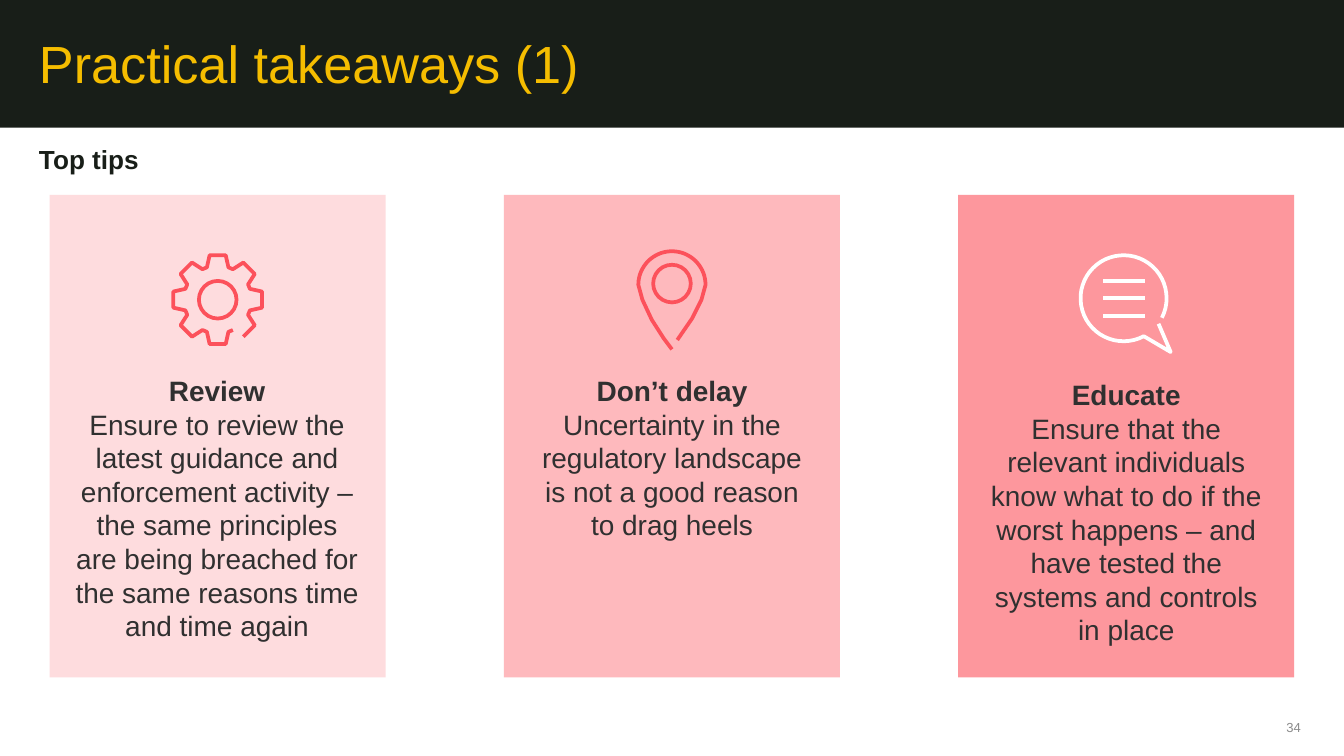
from math import cos, sin, radians
from lxml.etree import SubElement
from pptx import Presentation
from pptx.dml.color import RGBColor
from pptx.enum.shapes import MSO_CONNECTOR, MSO_SHAPE
from pptx.enum.text import MSO_ANCHOR, PP_ALIGN
from pptx.oxml.ns import qn
from pptx.util import Inches, Pt

CORAL, WHITE, DARK, GREY = "FC515B", "FFFFFF", "181E18", "303030"
rgb = RGBColor.from_string


def set_text(shape, lines, size, color, bold_first=False, align=PP_ALIGN.LEFT,
             anchor=MSO_ANCHOR.TOP):
    tf = shape.text_frame
    tf.word_wrap = True
    tf.vertical_anchor = anchor
    tf.margin_left = tf.margin_right = tf.margin_top = tf.margin_bottom = 0
    tf.text = "\n".join(lines)
    for i, p in enumerate(tf.paragraphs):
        p.alignment = align
        p.font.name, p.font.size = "Arial", Pt(size)
        p.font.color.rgb = rgb(color)
        p.font.bold = bold_first and i == 0


def arc(cx, cy, r, start, end, steps=48):
    angles = [radians(start + (end - start) * i / steps) for i in range(steps + 1)]
    return [(cx + r * cos(a), cy + r * sin(a)) for a in angles]


# A 16:9 slide
prs = Presentation()
prs.slide_width = Inches(10)
prs.slide_height = prs.slide_width * 9 // 16
s = prs.slides.add_slide(prs.slide_layouts[5])

# Title on a dark band
band = s.shapes.add_shape(MSO_SHAPE.RECTANGLE, 0, 0, Inches(10), Inches(0.95))
band.shadow.inherit = False
band.fill.solid()
band.fill.fore_color.rgb = rgb(DARK)
band.line.fill.background()
s.shapes._spTree.insert(2, band._element)

title = s.shapes.title
title.left, title.top = Inches(0.29), Inches(0.23)
title.width, title.height = Inches(9.42), Inches(0.47)
set_text(title, ["Practical takeaways (1)"], 28, "F5BD00", anchor=MSO_ANCHOR.MIDDLE)

# Subheading and page number
tb = s.shapes.add_textbox(Inches(0.29), Inches(1.07), Inches(9.42), Inches(3.82))
set_text(tb, ["Top tips"], 14, DARK, bold_first=True)
tb = s.shapes.add_textbox(Inches(9.54), Inches(5.35), Inches(0.17), Inches(0.12))
set_text(tb, ["34"], 7, "8B8B8B", align=PP_ALIGN.CENTER, anchor=MSO_ANCHOR.MIDDLE)

# Cards: fill, text left, top and width, heading, body
cards = [
    ("FEDCDE", 0.54, 2.78, 2.15, "Review",
     "Ensure to review the latest guidance and enforcement activity – the same "
     "principles are being breached for the same reasons time and time again"),
    ("FEB9BD", 3.99, 2.78, 2.02, "Don’t delay",
     "Uncertainty in the regulatory landscape is not a good reason to drag heels"),
    ("FD979D", 7.37, 2.81, 2.02, "Educate",
     "Ensure that the relevant individuals know what to do if the worst happens – "
     "and have tested the systems and controls in place"),
]
for i, (fill, x, y, w, heading, body) in enumerate(cards):
    card = s.shapes.add_shape(MSO_SHAPE.RECTANGLE, Inches(0.37 + 3.38 * i), Inches(1.45),
                              Inches(2.5), Inches(3.59))
    card.shadow.inherit = False
    card.fill.solid()
    card.fill.fore_color.rgb = rgb(fill)
    card.line.fill.background()
    tb = s.shapes.add_textbox(Inches(x), Inches(y), Inches(w), Inches(0.75))
    set_text(tb, [heading, body], 15, GREY, bold_first=True, align=PP_ALIGN.CENTER)

# Icon outlines: eight-toothed gear, map pin, speech bubble
tooth = [(-0.08, -0.24), (-0.06, -0.33), (0.06, -0.33), (0.08, -0.24)]
gear = []
for k in range(3, 11):
    a = radians(45 * k)
    gear += [(1.62 + x * cos(a) - y * sin(a), 2.23 + x * sin(a) + y * cos(a))
             for x, y in tooth]
gear = gear[3:] + gear[:3]
pin = ([(5, 2.6), (4.94, 2.52), (4.85, 2.38), (4.78, 2.23)]
       + arc(5, 2.12, 0.25, 180, 360)
       + [(5.22, 2.23), (5.15, 2.37), (5.04, 2.53)])
bubble = arc(8.36, 2.22, 0.32, 27, -298) + [(8.71, 2.62), (8.62, 2.41)]

strokes = []
for points, color in [(gear, CORAL), (pin, CORAL), (bubble, WHITE)]:
    points = [(Inches(x), Inches(y)) for x, y in points]
    fb = s.shapes.build_freeform(*points[0])
    fb.add_line_segments(points[1:], close=False)
    strokes.append((fb.convert_to_shape(), color))

# Rings inside the gear and the pin
for cx, cy, r in [(1.62, 2.23, 0.14), (5, 2.11, 0.14)]:
    ring = s.shapes.add_shape(MSO_SHAPE.OVAL, Inches(cx - r), Inches(cy - r),
                              Inches(2 * r), Inches(2 * r))
    strokes.append((ring, CORAL))

for shape, color in strokes:
    shape.shadow.inherit = False
    shape.fill.background()
    shape.line.color.rgb = rgb(color)
    shape.line.width = Pt(2)

# Text lines inside the bubble
for i in range(3):
    y = Inches(2.09 + 0.13 * i)
    line = s.shapes.add_connector(MSO_CONNECTOR.STRAIGHT, Inches(8.21), y, Inches(8.52), y)
    line.line.color.rgb = rgb(WHITE)
    line.line.width = Pt(2)
    SubElement(line._element.spPr, qn("a:effectLst"))

prs.save("out.pptx")
